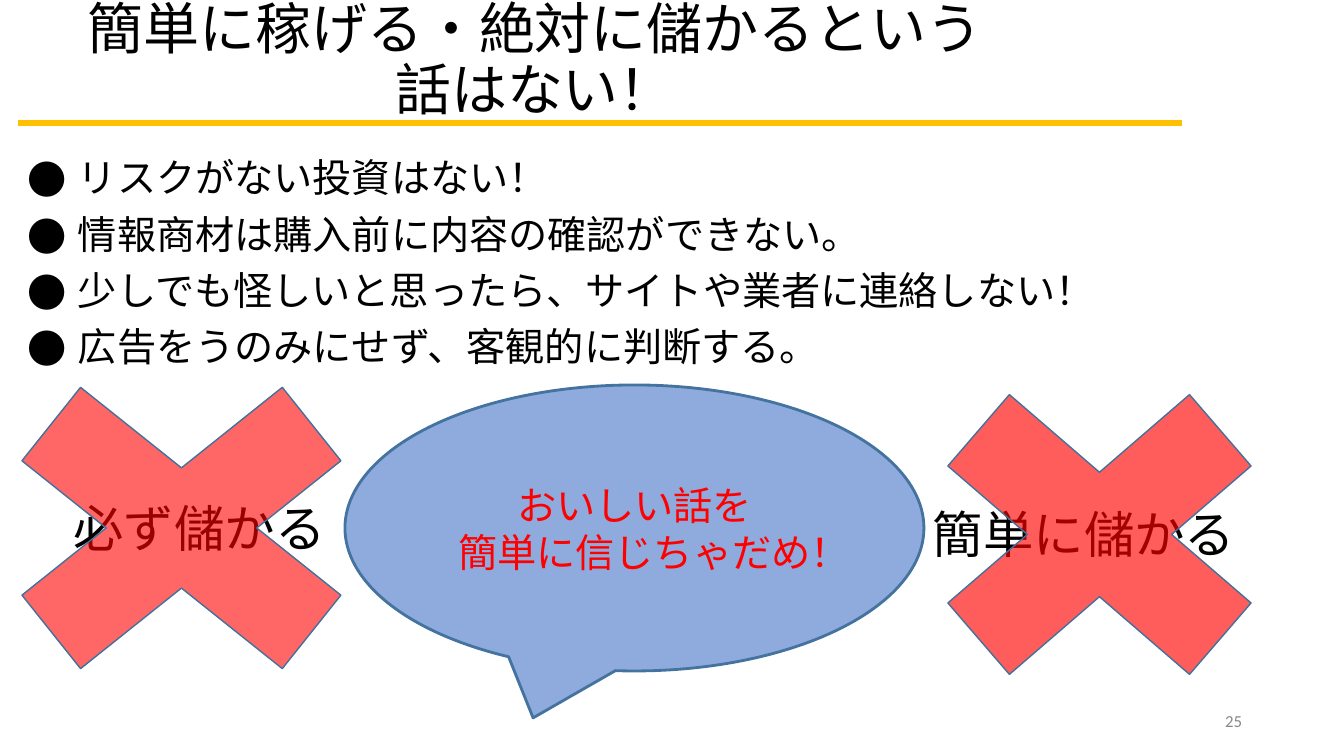
from lxml.etree import SubElement
from pptx import Presentation
from pptx.dml.color import RGBColor
from pptx.enum.shapes import MSO_CONNECTOR as CONNECTOR, MSO_SHAPE as SHAPE
from pptx.enum.text import MSO_ANCHOR as ANCHOR, PP_ALIGN as ALIGN
from pptx.oxml.ns import qn
from pptx.util import Pt

JP = "Noto Sans CJK JP"
TITLE = "簡単に稼げる・絶対に儲かるという\v話はない！"
ADVICE = [
    "リスクがない投資はない！",
    "情報商材は購入前に内容の確認ができない。",
    "少しでも怪しいと思ったら、サイトや業者に連絡しない！",
    "広告をうのみにせず、客観的に判断する。",
]
WARNING = ["おいしい話を", "簡単に信じちゃだめ！"]
PAGE = "25"
# claim, its box, box of the cross over it, opacity of the cross in percent
CLAIMS = [
    ("必ず儲かる", (22, 395, 355, 265), (-69, 328, 501, 400), 60),
    ("簡単に儲かる", (905, 378, 358, 310), (867, 334, 465, 401), 64),
]


def px(length):
    return round(length * 914400 / 100.8)


def color(hex_code):
    return RGBColor.from_string(hex_code)


def write(shape, lines, size, ink="000000", font=JP, align=ALIGN.CENTER,
          anchor=ANCHOR.MIDDLE, **spacing):
    """Fill a shape with one paragraph per line, all in one format."""
    frame = shape.text_frame
    frame.word_wrap = True
    frame.vertical_anchor = anchor
    frame.text = "\n".join(lines)
    for paragraph in frame.paragraphs:
        for name, value in {"alignment": align, **spacing}.items():
            setattr(paragraph, name, value)
        for run in paragraph.runs:
            for name, value in {"size": Pt(size), "name": font}.items():
                setattr(run.font, name, value)
            run.font.color.rgb = color(ink)
            SubElement(run.font._element, qn("a:ea"), typeface=JP)
    return frame


def add_text(box, lines, size, **style):
    return write(slide.shapes.add_textbox(*map(px, box)), lines, size, **style)


def add_figure(preset, box, adjustments, fill, outline, weight):
    figure = slide.shapes.add_shape(preset, *map(px, box))
    figure.shadow.inherit = False
    for index, value in enumerate(adjustments):
        figure.adjustments[index] = value
    figure.fill.solid()
    figure.fill.fore_color.rgb = color(fill)
    figure.line.color.rgb = color(outline)
    figure.line.width = Pt(weight)
    return figure


def add_bullet(paragraph):
    properties = paragraph._p.get_or_add_pPr()
    properties.set("marL", str(px(50)))
    properties.set("indent", str(-px(50)))
    SubElement(SubElement(properties, qn("a:buClr")), qn("a:srgbClr"), val="000000")
    SubElement(properties, qn("a:buFont"), typeface=JP)
    SubElement(properties, qn("a:buChar"), char="●")


deck = Presentation()
deck.slide_width, deck.slide_height = px(1344), px(756)
slide = deck.slides.add_slide(deck.slide_layouts[5])

title = slide.shapes.title
title.left, title.top, title.width, title.height = map(px, (18, 0, 1034, 124))
write(title, [TITLE], 40, line_spacing=0.9)

advice = add_text((18, 154, 1286, 230), ADVICE, 28, align=ALIGN.LEFT,
                  anchor=ANCHOR.TOP, line_spacing=0.9)
for number, paragraph in enumerate(advice.paragraphs):
    if number:
        paragraph.space_before = Pt(10)
    add_bullet(paragraph)

for claim, box, _, _ in CLAIMS:
    add_text(box, [claim], 36, font="Arial")
for _, _, box, opacity in CLAIMS:
    cross = add_figure(SHAPE.MATH_MULTIPLY, box, [0.235], "FF0000", "42719B", 1)
    red = cross.fill._xPr.find(qn("a:solidFill"))[0]
    SubElement(red, qn("a:alpha"), val=str(opacity * 1000))

add_text((950, 701, 302, 40), [PAGE], 12, ink="888888", font="Calibri",
         align=ALIGN.RIGHT)

rule = slide.shapes.add_connector(CONNECTOR.STRAIGHT, *map(px, (18, 123, 1182, 123)))
rule.line.color.rgb = color("FFC000")
rule.line.width = Pt(4.5)
SubElement(rule._element.spPr, qn("a:effectLst"))

callout = add_figure(SHAPE.OVAL_CALLOUT, (345, 385, 579, 286), [-0.175, 0.664],
                     "8FAADC", "43739E", 2)
write(callout, WARNING, 28, ink="FF0000")

deck.save("out.pptx")
